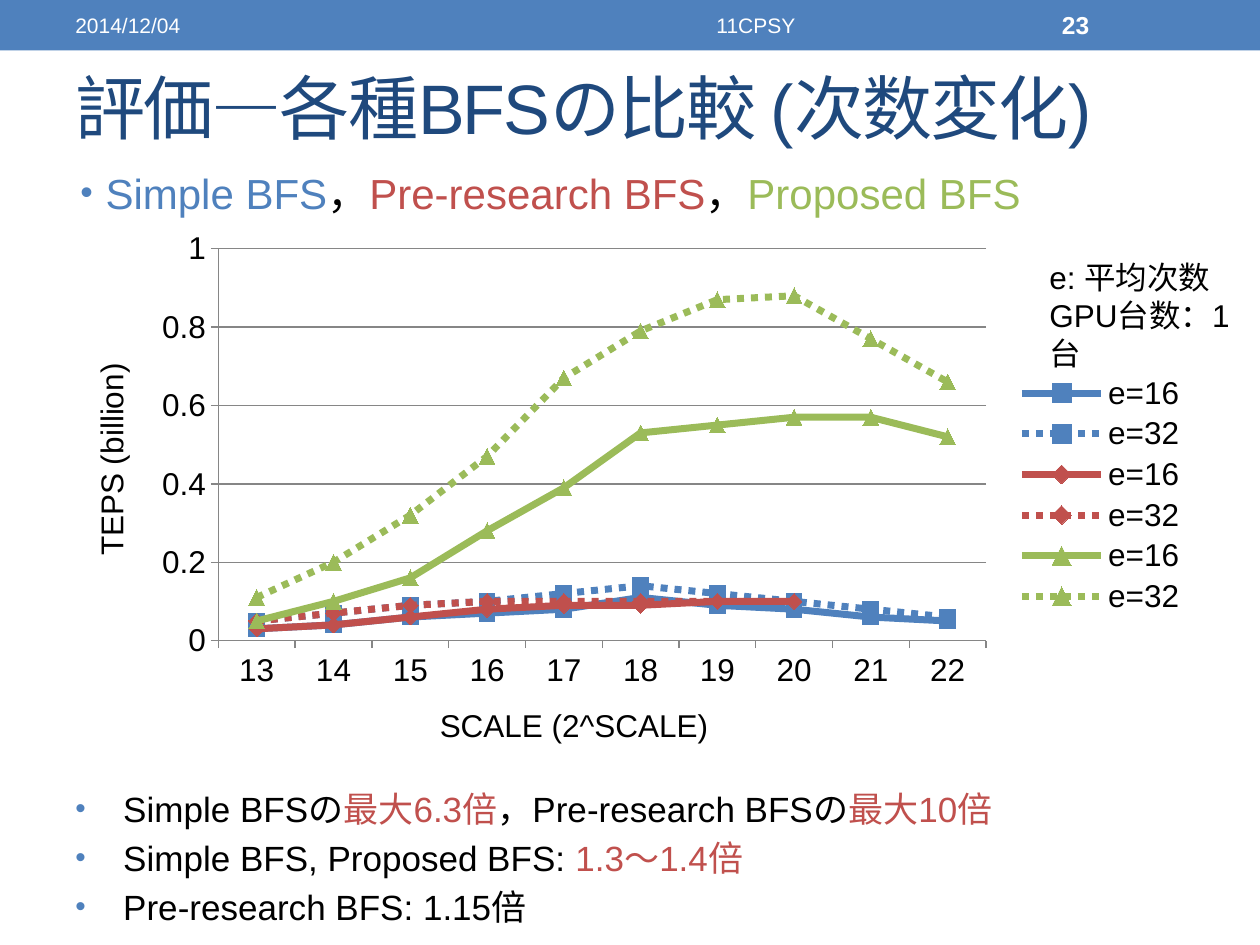
import pptx
import pptx.chart.data
import pptx.dml.color
import pptx.enum.chart
import pptx.enum.dml
import pptx.enum.shapes
import pptx.enum.text
import pptx.oxml
import pptx.oxml.ns
import pptx.util
from pptx.util import Inches

COLORS = {"blue": "4F81BD", "red": "C0504D", "green": "9BBB59", "navy": "1F497D",
          "black": "000000", "white": "FFFFFF", "gray": "868686"}
RGB = {name: pptx.dml.color.RGBColor.from_string(value) for name, value in COLORS.items()}
ALIGN = pptx.enum.text.PP_ALIGN

presentation = pptx.Presentation()
presentation.slide_width, presentation.slide_height = Inches(10), Inches(7.5)
slide = presentation.slides.add_slide(presentation.slide_layouts[6])


def add_text(box, paragraphs, size, anchor="MIDDLE", align=ALIGN.LEFT, indent=0):
    """Add a text box; each paragraph is a list of (text, color) runs, bulleted if indented."""
    frame = slide.shapes.add_textbox(*map(Inches, box)).text_frame
    frame.word_wrap = True
    frame.vertical_anchor = pptx.enum.text.MSO_ANCHOR[anchor]
    for index, runs in enumerate(paragraphs):
        paragraph = frame.add_paragraph() if index else frame.paragraphs[0]
        paragraph.alignment = align
        for text, color in runs:
            run = paragraph.add_run()
            run.text = text
            run.font.name, run.font.size = "Arial", pptx.util.Pt(size)
            run.font.color.rgb = RGB[color]
        if indent:
            paragraph.space_before = pptx.util.Pt(size * 0.2)
            properties = paragraph._p.get_or_add_pPr()
            properties.set("marL", str(Inches(indent)))
            properties.set("indent", str(-Inches(indent)))
            bullet_color = pptx.oxml.ns.qn("a:buClr")
            color_element = properties.makeelement(bullet_color, {})
            color_element.append(properties.makeelement(
                pptx.oxml.ns.qn("a:srgbClr"), {"val": COLORS["blue"]}))
            properties.append(color_element)
            for tag, attributes in (("a:buSzPct", {"val": "85000"}),
                                    ("a:buFont", {"typeface": "Arial"}),
                                    ("a:buChar", {"char": "•"})):
                properties.append(properties.makeelement(pptx.oxml.ns.qn(tag), attributes))
    return frame


def manual_layout(x, y, width, height, inner=False):
    """Return a c:layout element in fractions of the chart area."""
    target = '<c:layoutTarget val="inner"/>' if inner else ""
    return pptx.oxml.parse_xml(
        f'<c:layout {pptx.oxml.ns.nsdecls("c")}><c:manualLayout>{target}'
        '<c:xMode val="edge"/><c:yMode val="edge"/>'
        f'<c:x val="{x}"/><c:y val="{y}"/><c:w val="{width}"/><c:h val="{height}"/>'
        '</c:manualLayout></c:layout>')


# Header band and title
band = slide.shapes.add_shape(pptx.enum.shapes.MSO_SHAPE.RECTANGLE,
                              0, 0, Inches(10), Inches(0.4))
band.shadow.inherit = False
band.fill.solid()
band.fill.fore_color.rgb = RGB["blue"]
band.line.fill.background()
add_text((0.5, 0.02, 3.17, 0.36), [[("2014/12/04", "white")]], 12)
add_text((3.75, 0.02, 4.5, 0.36), [[("11CPSY", "white")]], 12, align=ALIGN.CENTER)
number = add_text((8.33, 0.02, 1.17, 0.36), [[("23", "white")]], 14)
number.paragraphs[0].runs[0].font.bold = True
title = add_text((0.5, 0.41, 9, 0.87), [[("評価―各種BFSの比較 (次数変化)", "navy")]], 40)
title.paragraphs[0].runs[0].font._element.set("spc", "-100")

# Chart: each method has a solid line for e=16 and a dotted one for e=32
methods = [
    ("blue", "SQUARE",
     (0.03, 0.04, 0.06, 0.07, 0.08, 0.11, 0.09, 0.08, 0.06, 0.05),
     (0.05, 0.07, 0.09, 0.1, 0.12, 0.14, 0.12, 0.1, 0.08, 0.06)),
    ("red", "DIAMOND",
     (0.03, 0.04, 0.06, 0.08, 0.09, 0.09, 0.1, 0.1, None, None),
     (0.05, 0.07, 0.09, 0.1, 0.1, 0.1, 0.1, None, None, None)),
    ("green", "TRIANGLE",
     (0.05, 0.1, 0.16, 0.28, 0.39, 0.53, 0.55, 0.57, 0.57, 0.52),
     (0.11, 0.2, 0.32, 0.47, 0.67, 0.79, 0.87, 0.88, 0.77, 0.66)),
]
data = pptx.chart.data.CategoryChartData()
data.categories = [str(scale) for scale in range(13, 23)]
styles = []
for color, marker, solid_values, dotted_values in methods:
    data.add_series("e=16", solid_values)
    data.add_series("e=32", dotted_values)
    styles += [(color, marker, False), (color, marker, True)]
chart = slide.shapes.add_chart(pptx.enum.chart.XL_CHART_TYPE.LINE_MARKERS, Inches(0.5),
                               Inches(1.75), Inches(9), Inches(4.4), data).chart
chart.has_title = False
chart.font.name, chart.font.size = "Arial", pptx.util.Pt(18)
chart.font.color.rgb = RGB["black"]

for series, (color, marker, dotted) in zip(chart.plots[0].series, styles):
    series.smooth = False
    series.format.line.color.rgb = RGB[color]
    series.format.line.width = pptx.util.Pt(4)
    if dotted:
        series.format.line.dash_style = pptx.enum.dml.MSO_LINE.ROUND_DOT
    series.marker.style = pptx.enum.chart.XL_MARKER_STYLE[marker]
    series.marker.size = 9
    series.marker.format.fill.solid()
    series.marker.format.fill.fore_color.rgb = RGB[color]
    series.marker.format.line.color.rgb = RGB[color]

for axis, text in ((chart.category_axis, "SCALE (2^SCALE)"),
                   (chart.value_axis, "TEPS (billion)")):
    axis.format.line.color.rgb = RGB["gray"]
    axis.major_tick_mark = pptx.enum.chart.XL_TICK_MARK.OUTSIDE
    frame = axis.axis_title.text_frame
    frame.text = text
    font = frame.paragraphs[0].runs[0].font
    font.name, font.size, font.bold = "Arial", pptx.util.Pt(18), False
    font.color.rgb = RGB["black"]
frame._txBody.bodyPr.set("rot", "-5400000")
frame._txBody.bodyPr.set("vert", "horz")
value_axis = chart.value_axis
value_axis.minimum_scale, value_axis.maximum_scale, value_axis.major_unit = 0, 1, 0.2
value_axis.major_gridlines.format.line.color.rgb = RGB["gray"]
value_axis.tick_labels.number_format = "General"
value_axis.tick_labels.number_format_is_linked = False

chart.has_legend = True
chart.legend.position = pptx.enum.chart.XL_LEGEND_POSITION.RIGHT
chart.legend.include_in_layout = False
plot_area = chart._chartSpace.chart.plotArea
for element, layout, place in (
        (plot_area, manual_layout(0.137, 0.051, 0.677, 0.707, inner=True), 0),
        (chart.legend._element, manual_layout(0.84, 0.27, 0.15, 0.45), 1)):
    for old_layout in element.findall(pptx.oxml.ns.qn("c:layout")):
        element.remove(old_layout)
    element.insert(place, layout)

# Method names, chart note and findings
add_text((0.54, 1.28, 8.93, 0.7),
         [[("Simple BFS", "blue"), ("，", "black"), ("Pre-research BFS", "red"),
           ("，", "black"), ("Proposed BFS", "green")]], 24, "TOP", indent=0.2)
add_text((8.23, 2, 1.77, 0.71),
         [[("e: 平均次数", "black")], [("GPU台数：1台", "black")]], 18, "TOP")
add_text((0.5, 6.15, 9, 1.31),
         [[("Simple BFSの", "black"), ("最大6.3倍", "red"),
           ("，Pre-research BFSの", "black"), ("最大10倍", "red")],
          [("Simple BFS, Proposed BFS: ", "black"), ("1.3〜1.4倍", "red")],
          [("Pre-research BFS: 1.15倍", "black")]], 20, indent=0.38)

presentation.save("out.pptx")
